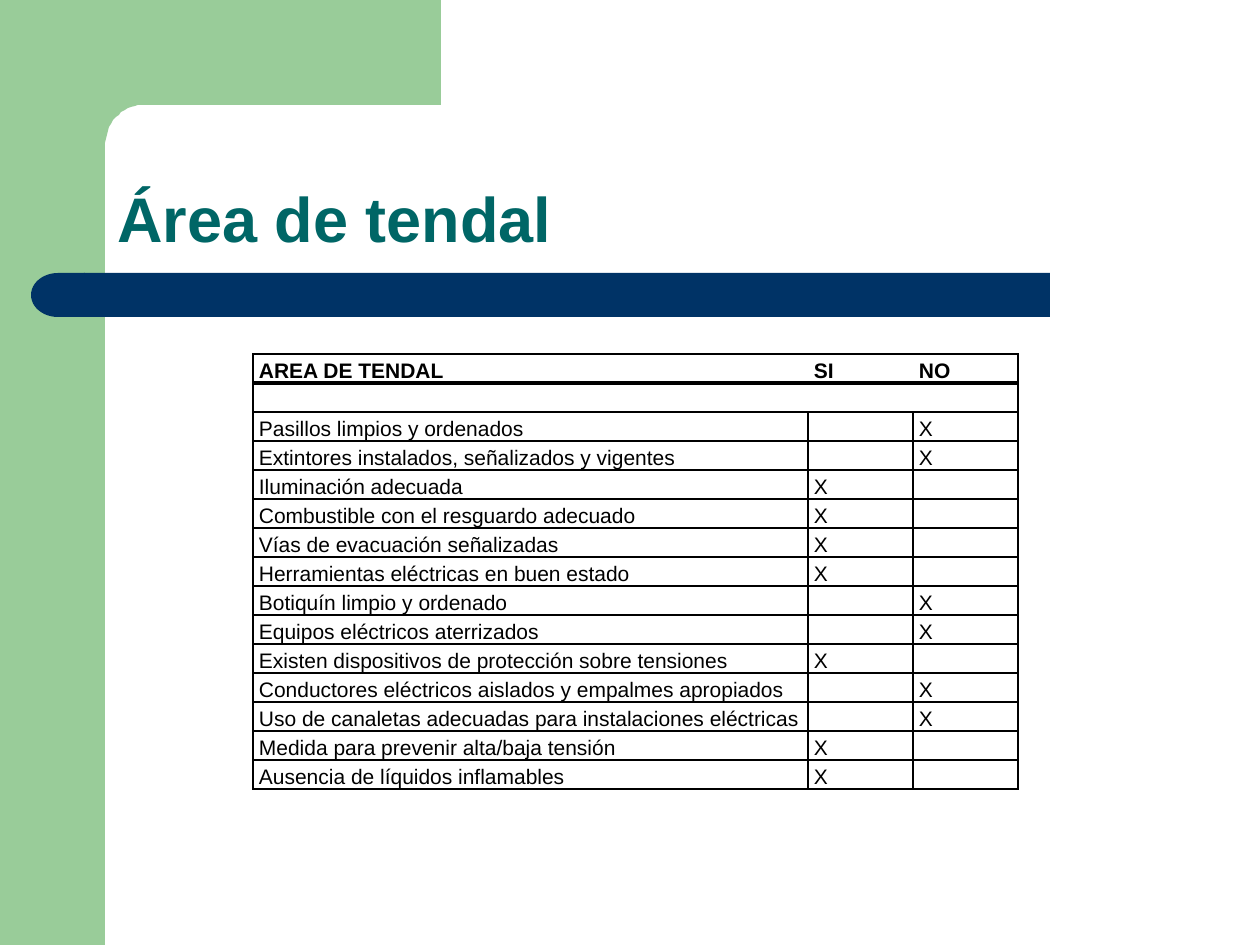
from math import cos, pi, sin

from lxml.etree import SubElement
from pptx import Presentation
from pptx.dml.color import RGBColor
from pptx.enum.shapes import MSO_SHAPE
from pptx.enum.text import MSO_ANCHOR
from pptx.oxml.ns import qn
from pptx.util import Pt

PX = 914400 / 126
COLORS = {"green": "99CC99", "navy": "003366", "teal": "006666", "black": "000000"}
FONT = "Arial"
TITLE = {"size": Pt(36), "bold": True}
HEADER = {"size": Pt(12), "bold": True}
BODY = {"size": Pt(12), "bold": False}

CHECKS = [
    ("Pasillos limpios y ordenados", "NO"),
    ("Extintores instalados, señalizados y vigentes", "NO"),
    ("Iluminación adecuada", "SI"),
    ("Combustible con el resguardo adecuado", "SI"),
    ("Vías de evacuación señalizadas", "SI"),
    ("Herramientas eléctricas en buen estado", "SI"),
    ("Botiquín limpio y ordenado", "NO"),
    ("Equipos eléctricos aterrizados", "NO"),
    ("Existen dispositivos de protección sobre tensiones", "SI"),
    ("Conductores eléctricos aislados y empalmes apropiados", "NO"),
    ("Uso de canaletas adecuadas para instalaciones eléctricas", "NO"),
    ("Medida para prevenir alta/baja tensión", "SI"),
    ("Ausencia de líquidos inflamables", "SI"),
]


def emu(*lengths):
    return [round(length * PX) for length in lengths]


class SlideBuilder:
    def __init__(self, slide):
        self.slide = slide

    def paint(self, shape, color):
        shape.shadow.inherit = False
        shape.fill.solid()
        shape.fill.fore_color.rgb = RGBColor.from_string(COLORS[color])
        shape.line.fill.background()

    def shape(self, kind, color, *place):
        shape = self.slide.shapes.add_shape(kind, *emu(*place))
        self.paint(shape, color)
        return shape

    def outline(self, color, points):
        builder = self.slide.shapes.build_freeform(*points[0], scale=PX)
        builder.add_line_segments(points[1:], close=True)
        self.paint(builder.convert_to_shape(), color)

    def fill_para(self, para, text, color, spacing, style):
        para.line_spacing = spacing
        if not text:
            # Keeps an empty cell as low as a filled one
            SubElement(para._p, qn("a:endParaRPr"), sz=str(round(style["size"].pt * 100)))
            return
        span = para.add_run()
        span.text = text
        span.font.name = FONT
        span.font.color.rgb = RGBColor.from_string(COLORS[color])
        for name, value in style.items():
            setattr(span.font, name, value)

    def title(self, text, *place):
        box = self.slide.shapes.add_textbox(*emu(*place))
        box.text_frame.word_wrap = True
        box.text_frame.vertical_anchor = MSO_ANCHOR.BOTTOM
        self.fill_para(box.text_frame.paragraphs[0], text, "teal", 0.9, TITLE)

    def border(self, cell, side, points):
        line = SubElement(cell._tc.get_or_add_tcPr(), qn(f"a:ln{side}"), w=str(Pt(points)))
        if points:
            fill = SubElement(line, qn("a:solidFill"))
            SubElement(fill, qn("a:srgbClr"), val=COLORS["black"])
        else:
            SubElement(line, qn("a:noFill"))

    def table(self, rows, left, top, widths, heights):
        place = emu(left, top, sum(widths), sum(heights))
        table = self.slide.shapes.add_table(len(rows), len(widths), *place).table
        table.first_row = table.horz_banding = False
        for column, width in zip(table.columns, emu(*widths)):
            column.width = width
        for row, height in zip(table.rows, emu(*heights)):
            row.height = height
        last = len(widths) - 1
        layout = {"margin_left": emu(6)[0], "margin_right": emu(6)[0],
                  "margin_top": 0, "margin_bottom": 0,
                  "vertical_anchor": MSO_ANCHOR.BOTTOM}
        for r, texts in enumerate(rows):
            for c, text in enumerate(texts):
                cell = table.cell(r, c)
                for name, value in layout.items():
                    setattr(cell, name, value)
                style = HEADER if r == 0 else BODY
                self.fill_para(cell.text_frame.paragraphs[0], text, "black", 1.15, style)
                # The first two rows have no inner verticals and share a thick rule
                sides = {"L": 1 if r > 1 or c == 0 else 0,
                         "R": 1 if r > 1 or c == last else 0,
                         "T": 2.25 if r == 1 else 1,
                         "B": 2.25 if r == 0 else 1}
                for side, points in sides.items():
                    self.border(cell, side, points)
                cell.fill.background()


def main():
    deck = Presentation()
    deck.slide_width, deck.slide_height = emu(1260, 945)
    page = SlideBuilder(deck.slides.add_slide(deck.slide_layouts[6]))

    # Green side band and its corner with a rounded inner edge
    page.shape(MSO_SHAPE.RECTANGLE, "green", 0, 0, 105, 945)
    angles = [pi / 2 * step / 16 for step in range(17)]
    curve = [(142 - 37 * sin(a), 147 - 42 * cos(a)) for a in angles]
    page.outline("green", [(441, 0), (441, 105), *curve, (105, 161), (63, 161), (63, 0)])

    # Navy bar with a round left end
    bar = page.shape(MSO_SHAPE.ROUNDED_RECTANGLE, "navy", 84, 273, 966, 44)
    bar.adjustments[0] = 0
    bar_end = page.shape(MSO_SHAPE.FLOWCHART_DELAY, "navy", 31, 273, 54, 44)
    bar_end._element.spPr.xfrm.set("flipH", "1")

    # Title
    page.title("Área de tendal", 105, 105, 1092, 157)

    # Checklist
    answers = ["SI", "NO"]
    rows = [["AREA DE TENDAL", *answers], [""] * 3]
    rows += [[item, *("X" if answer == mark else "" for answer in answers)]
             for item, mark in CHECKS]
    page.table(rows, 253, 354, [555, 105, 105], [29] * 2 + [27] * len(CHECKS))

    deck.save("out.pptx")


if __name__ == "__main__":
    main()
